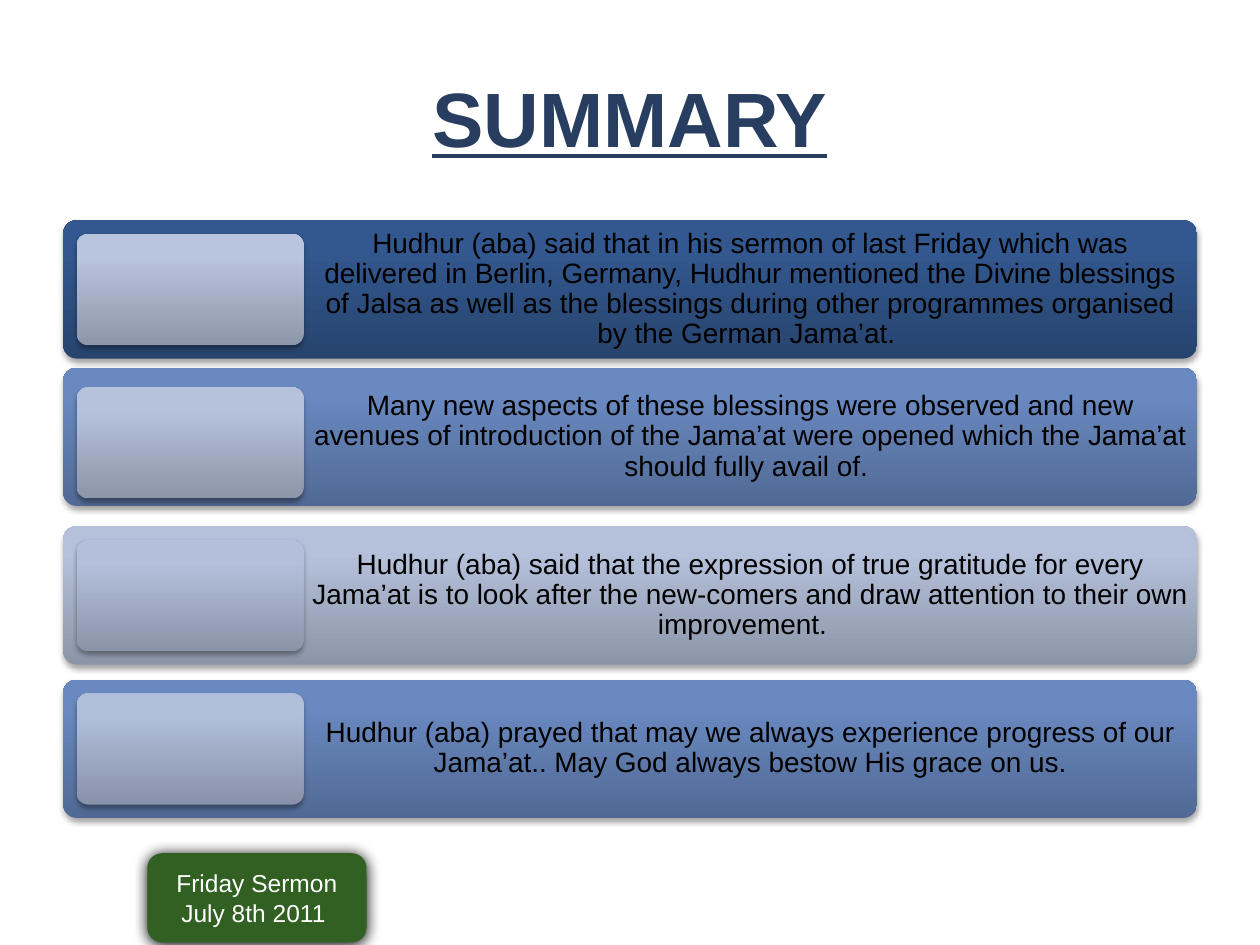
"""Build a summary slide with four gradient panels and a dated badge."""
from copy import deepcopy
from dataclasses import dataclass

from lxml import etree
from pptx import Presentation
from pptx import util as u
from pptx.dml.color import RGBColor
from pptx.enum import shapes, text
from pptx.oxml.ns import qn

FONT = "Arial"
LEFT, WIDTH, HEIGHT = 1.27, 22.86, 2.79
TILE_LEFT, TILE_WIDTH, TILE_HEIGHT = 1.55, 4.57, 2.24
TEXT_LEFT = TILE_LEFT + TILE_WIDTH
STOP_POSITIONS = (0, 80, 100)
BLUE = ("516994", "6989C0", "6889C2")


@dataclass
class Box:
    left: float
    top: float
    width: float
    height: float

    def lengths(self) -> tuple:
        return tuple(u.Cm(value) for value in (self.left, self.top, self.width, self.height))


@dataclass
class Shadow:
    opacity: int
    blur: float
    distance: float


@dataclass
class Panel:
    top: float
    wording: str
    colours: tuple
    tile_colours: tuple
    tile_offset: float = 0.28


PANEL_SHADOW = Shadow(35, 3.1, 1.8)
BADGE_SHADOW = Shadow(100, 8.5, 1)

PANELS = (
    Panel(4.44, "Hudhur (aba) said that in his sermon of last Friday which was delivered in Berlin, "
          "Germany, Hudhur mentioned the Divine blessings of Jalsa as well as the blessings during "
          "other programmes organised by the German Jama’at. ",
          ("27446E", "32588F", "315892"), ("8E97AA", "B9C4DD", "B9C5DF")),
    Panel(7.41, "Many new aspects of these blessings were observed and new avenues of introduction "
          "of the Jama’at were opened which the Jama’at should fully avail of. ",
          BLUE, ("8C96A9", "B6C2DC", "B6C3DE"), 0.4),
    Panel(10.61, "Hudhur (aba) said that the expression of true gratitude for every Jama’at is to "
          "look after the new-comers and draw attention to their own improvement.  ",
          ("8B95A8", "B5C1DB", "B5C2DC"), ("8A94A9", "B4C0DB", "B4C1DD")),
    Panel(13.7, "Hudhur (aba) prayed that may we always experience progress of our Jama’at.. "
          "May God always bestow His grace on us.",
          BLUE, ("8892A8", "B1BEDA", "B1BFDC")),
)


def colour(value: str) -> RGBColor:
    return RGBColor.from_string(value)


def add_shadow(shape, shadow: Shadow) -> None:
    shape.shadow.inherit = False
    effects = shape._element.spPr.find(qn("a:effectLst"))
    outer = etree.SubElement(effects, qn("a:outerShdw"), blurRad=str(u.Pt(shadow.blur)),
                             dist=str(u.Pt(shadow.distance)), dir="5400000", rotWithShape="0")
    black = etree.SubElement(outer, qn("a:srgbClr"), val="000000")
    etree.SubElement(black, qn("a:alpha"), val=str(shadow.opacity * 1000))


def add_rounded(container, box: Box, shadow: Shadow):
    shape = container.add_shape(shapes.MSO_SHAPE.ROUNDED_RECTANGLE, *box.lengths())
    shape.line.fill.background()
    add_shadow(shape, shadow)
    return shape


def add_gradient_box(container, box: Box, colours: tuple) -> None:
    shape = add_rounded(container, box, PANEL_SHADOW)
    shape.adjustments[0] = 0.1
    shape.fill.gradient()
    shape.fill.gradient_angle = 90
    stop_list = shape._element.spPr.find(".//" + qn("a:gsLst"))
    stop_list.insert(1, deepcopy(stop_list[0]))
    for stop, position, value in zip(shape.fill.gradient_stops, STOP_POSITIONS, colours):
        stop.position = position / 100
        stop.color.rgb = colour(value)


def write(shape, lines: tuple, size: int, value: str) -> None:
    frame = shape.text_frame
    frame.word_wrap = True
    frame.vertical_anchor = text.MSO_ANCHOR.MIDDLE
    frame.text = "\n".join(lines)
    for paragraph in frame.paragraphs:
        paragraph.alignment = text.PP_ALIGN.CENTER
        paragraph.font.name = FONT
        paragraph.font.size = u.Pt(size)
        paragraph.font.color.rgb = colour(value)


def set_margins(frame, margin: float) -> None:
    frame.margin_left = frame.margin_right = u.Cm(margin)
    frame.margin_top = frame.margin_bottom = u.Cm(margin)


def add_title(slide, wording: str) -> None:
    title = slide.shapes.add_textbox(*Box(LEFT, 1.27, WIDTH, 2.54).lengths())
    write(title, (wording,), 44, "273E60")
    frame = title.text_frame
    set_margins(frame, 0)
    frame.margin_top = u.Cm(0.15)
    frame.vertical_anchor = text.MSO_ANCHOR.TOP
    font = frame.paragraphs[0].font
    font.bold = font.underline = True


def add_panel(container, panel: Panel) -> None:
    add_gradient_box(container, Box(LEFT, panel.top, WIDTH, HEIGHT), panel.colours)
    text_box = Box(TEXT_LEFT, panel.top, LEFT + WIDTH - TEXT_LEFT, HEIGHT)
    label = container.add_textbox(*text_box.lengths())
    write(label, (panel.wording,), 16, "000000")
    set_margins(label.text_frame, 0.17)
    label.text_frame.paragraphs[0].line_spacing = 0.9
    tile = Box(TILE_LEFT, panel.top + panel.tile_offset, TILE_WIDTH, TILE_HEIGHT)
    add_gradient_box(container, tile, panel.tile_colours)


def add_badge(slide) -> None:
    badge = add_rounded(slide.shapes, Box(2.97, 17.2, 4.42, 1.8), BADGE_SHADOW)
    badge.fill.solid()
    badge.fill.fore_color.rgb = colour("326023")
    write(badge, ("Friday Sermon", "July 8th 2011 "), 14, "FFFFFF")


def main() -> None:
    presentation = Presentation()
    presentation.slide_width, presentation.slide_height = u.Cm(25.4), u.Cm(19.05)
    slide = presentation.slides.add_slide(presentation.slide_layouts[6])
    add_title(slide, "SUMMARY")
    group = slide.shapes.add_group_shape()
    for panel in PANELS:
        add_panel(group.shapes, panel)
    add_badge(slide)
    presentation.save("out.pptx")


if __name__ == "__main__":
    main()
